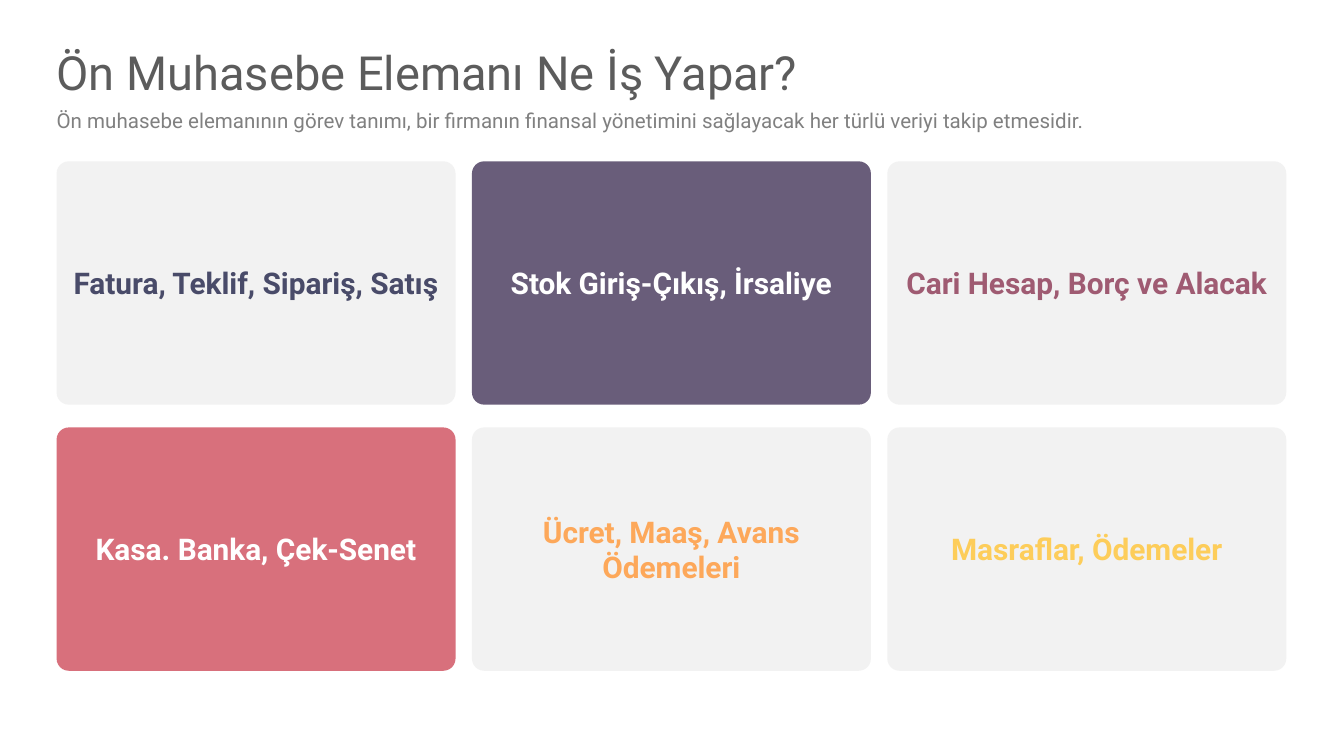
from pptx import Presentation
from pptx.dml.color import RGBColor
from pptx.enum.shapes import MSO_SHAPE
from pptx.enum.text import MSO_ANCHOR, MSO_AUTO_SIZE, PP_ALIGN
from pptx.util import Cm, Pt

ROUNDED = MSO_SHAPE.ROUNDED_RECTANGLE
MIDDLE = MSO_ANCHOR.MIDDLE
NO_AUTOFIT = MSO_AUTO_SIZE.NONE
LEFT, CENTER = PP_ALIGN.LEFT, PP_ALIGN.CENTER

FONT = "Roboto"
WHITE = RGBColor(0xFF, 0xFF, 0xFF)
LIGHT_GRAY = RGBColor(0xF2, 0xF2, 0xF2)
MID_GRAY = RGBColor(0x80, 0x80, 0x80)
DARK_GRAY = RGBColor(0x5C, 0x5C, 0x5C)
NAVY = RGBColor(0x49, 0x4B, 0x69)
PURPLE = RGBColor(0x69, 0x5D, 0x7A)
PLUM = RGBColor(0x9F, 0x5B, 0x72)
RED = RGBColor(0xD8, 0x70, 0x7C)
ORANGE = RGBColor(0xFD, 0xA8, 0x5A)
YELLOW = RGBColor(0xFD, 0xCD, 0x5A)

TITLE = "Ön Muhasebe Elemanı Ne İş Yapar?"
SUBTITLE = ("Ön muhasebe elemanının görev tanımı, bir firmanın finansal "
            "yönetimini sağlayacak her türlü veriyi takip etmesidir.")

# Rows of duty cards: text, fill, text colour
DUTIES = [
    [("Fatura, Teklif, Sipariş, Satış", LIGHT_GRAY, NAVY),
     ("Stok Giriş-Çıkış, İrsaliye", PURPLE, WHITE),
     ("Cari Hesap, Borç ve Alacak", LIGHT_GRAY, PLUM)],
    [("Kasa. Banka, Çek-Senet", RED, WHITE),
     ("Ücret, Maaş, Avans Ödemeleri", LIGHT_GRAY, ORANGE),
     ("Masraflar, Ödemeler", LIGHT_GRAY, YELLOW)],
]


def write_text(shape, text, size, color, alignment, bold=False):
    frame = shape.text_frame
    frame.text = text
    frame.word_wrap = True
    frame.auto_size = NO_AUTOFIT
    frame.vertical_anchor = MIDDLE
    paragraph = frame.paragraphs[0]
    paragraph.alignment = alignment
    font = paragraph.font
    font.name, font.size, font.bold = FONT, Pt(size), bold
    font.color.rgb = color


def remove_margins(shape):
    frame = shape.text_frame
    frame.margin_left = frame.margin_right = 0
    frame.margin_top = frame.margin_bottom = 0


def add_heading(slide, left, top, width):
    # Title
    title = slide.shapes.title
    title.left, title.top = left, top
    title.width, title.height = width, Cm(1.14)
    write_text(title, TITLE, 25.2, DARK_GRAY, LEFT)
    remove_margins(title)

    # Subtitle
    subtitle = slide.shapes.add_textbox(left, top + Cm(1.24), width, Cm(0.48))
    write_text(subtitle, SUBTITLE, 11, MID_GRAY, LEFT)
    remove_margins(subtitle)


def add_card_grid(slide, left, top, width, height):
    column_gap, row_gap = Cm(0.31), Cm(0.43)
    columns, rows = len(DUTIES[0]), len(DUTIES)
    card_width = (width - column_gap * (columns - 1)) // columns
    card_height = (height - row_gap * (rows - 1)) // rows
    for row, duties in enumerate(DUTIES):
        for column, (text, fill, color) in enumerate(duties):
            card = slide.shapes.add_shape(
                ROUNDED,
                left + column * (card_width + column_gap),
                top + row * (card_height + row_gap),
                card_width, card_height)
            card.adjustments[0] = 0.05
            card.shadow.inherit = False
            card.fill.solid()
            card.fill.fore_color.rgb = fill
            card.line.fill.background()
            write_text(card, text, 16, color, CENTER, bold=True)


def main():
    presentation = Presentation()
    presentation.slide_width = Cm(25.4)
    presentation.slide_height = Cm(14.29)
    title_only = presentation.slide_layouts[5]
    slide = presentation.slides.add_slide(title_only)

    left, width = Cm(1.07), Cm(23.24)
    add_heading(slide, left, Cm(0.79), width)
    add_card_grid(slide, left, Cm(3.05), width, Cm(9.63))
    presentation.save("out.pptx")


if __name__ == "__main__":
    main()
